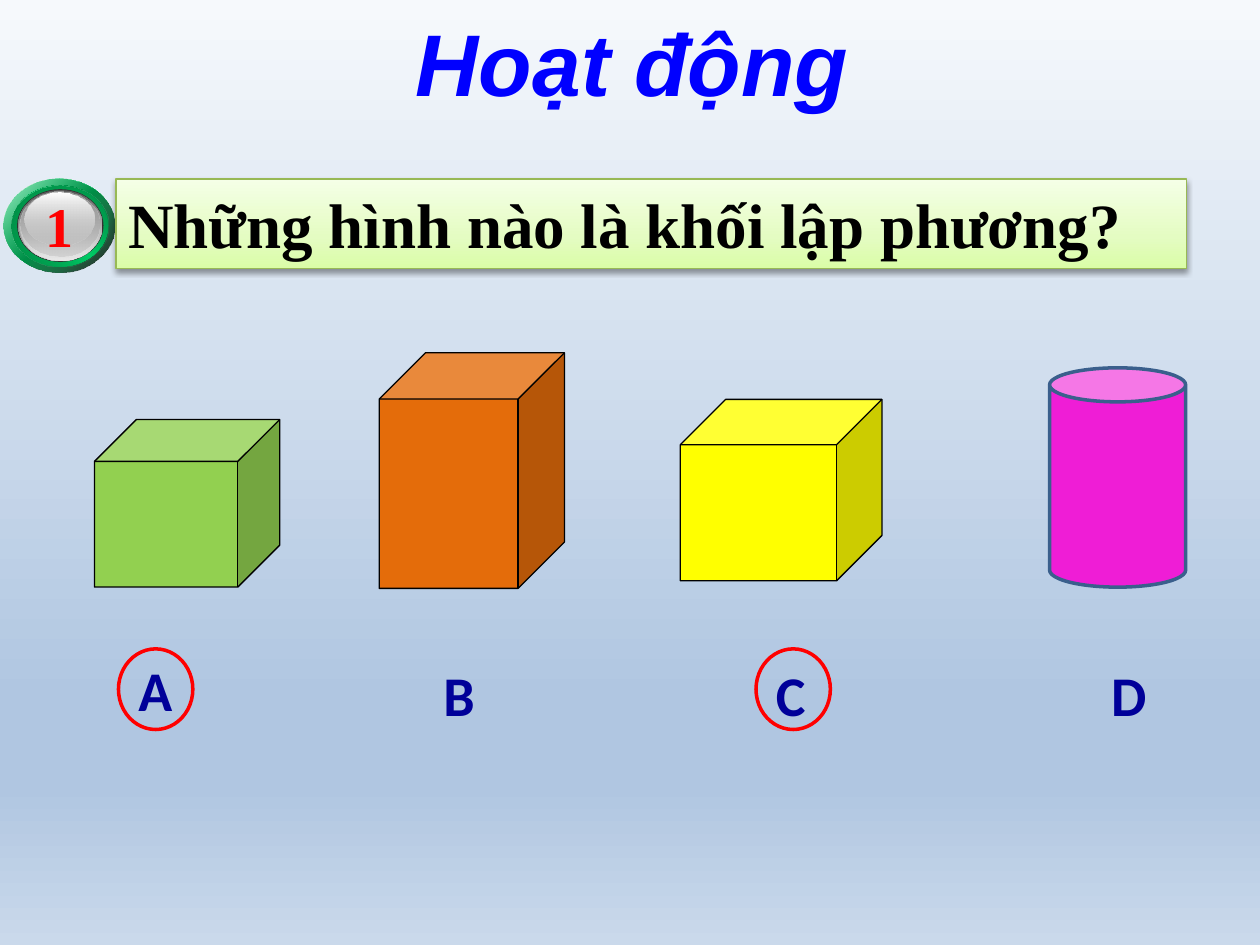
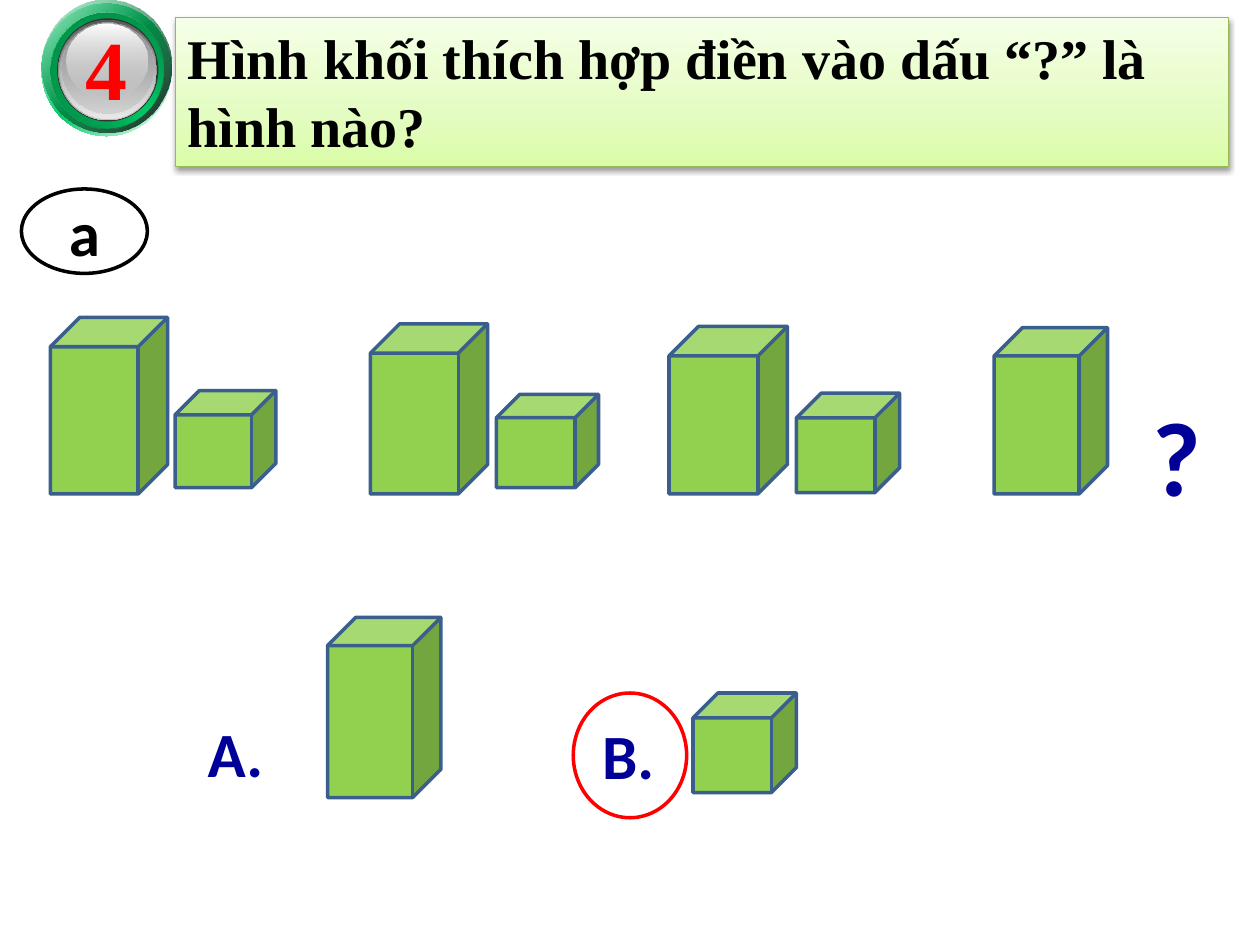
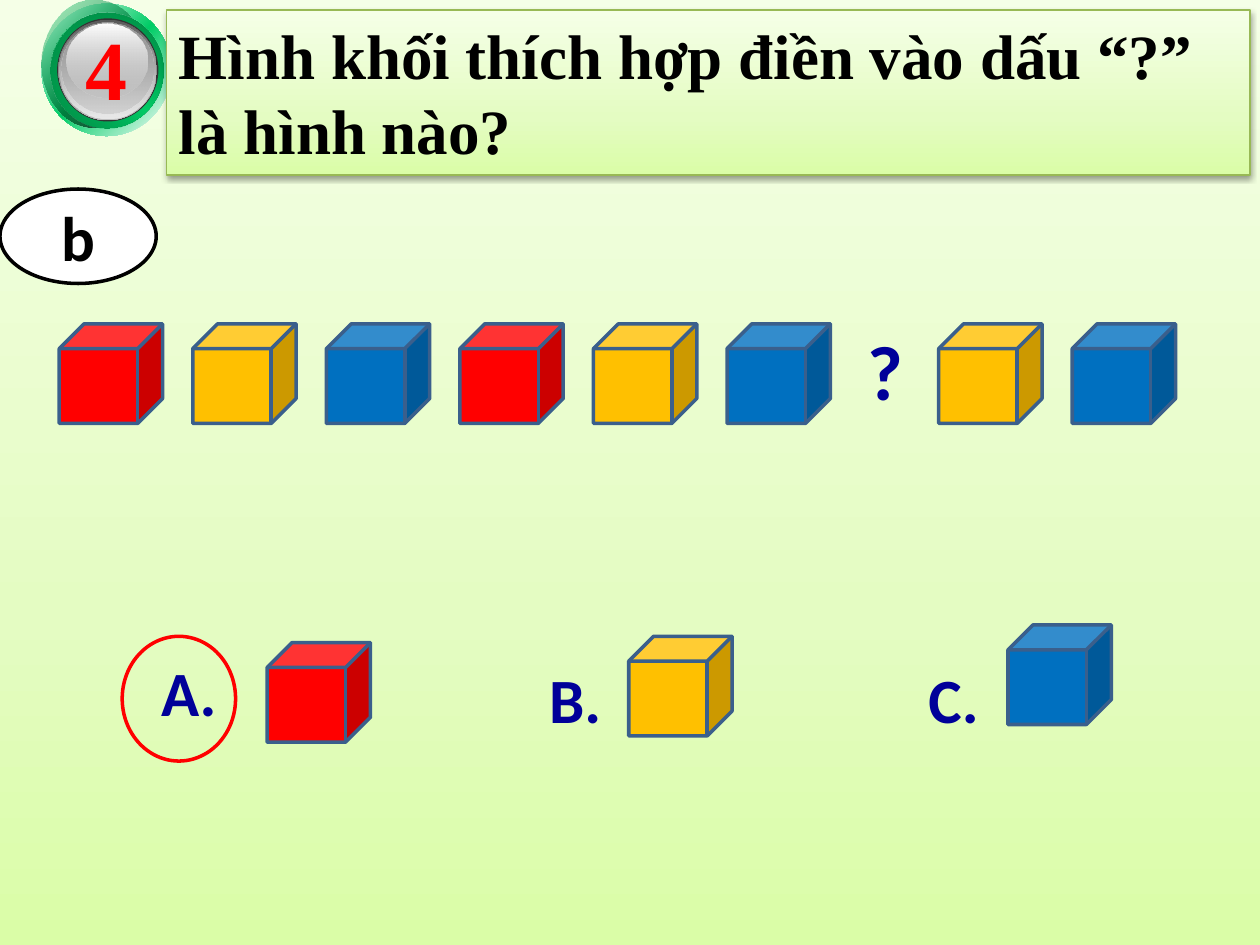
from lxml.etree import SubElement
from pptx import Presentation
from pptx.dml.color import RGBColor
from pptx.enum.shapes import MSO_SHAPE
from pptx.enum.text import MSO_ANCHOR, MSO_AUTO_SIZE, PP_ALIGN
from pptx.oxml.ns import qn
from pptx.util import Inches, Pt

COLORS = {
    "black": "000000", "white": "FFFFFF", "red": "FF0000", "navy": "000099",
    "title": "0000FF", "edge": "3A5F8C", "band_edge": "98B955", "rim": "333333",
    "green": "92D050", "orange": "E46C0A", "yellow": "FFFF00", "pink": "EF1DD6",
    "gold": "FFC000", "blue": "0070C0",
}

# A gradient is (angle, [(position, colour, opacity), ...])
LIME = (270, [(0, "DAFDA7", 100), (35, "E4FCC2", 100), (100, "F5FFE7", 100)])
SKY = (90, [(0, "F6F9FC", 100), (74, "B0C6E1", 100), (83, "B0C6E1", 100),
            (100, "CAD9EB", 100)])
HALO = (45, [(0, "FFFFFF", 100), (50, "00CC66", 100), (100, "FFFFFF", 100)])
SHEEN = (45, [(0, "00CC66", 32), (100, "000000", 90)])

# Inner badge layers: left, top, width, height as shares of the badge, then the fill
BADGE_LAYERS = [
    (0.07, 0.07, 0.87, 0.87,
     (315, [(0, "006E37", 100), (50, "00CC66", 100), (100, "006E37", 100)])),
    (0.07, 0.07, 0.87, 0.87, (45, [(0, "008241", 100), (100, "00CC66", 0)])),
    (0.12, 0.11, 0.78, 0.78, "rim"),
    (0.13, 0.12, 0.76, 0.76, (90, [(0, "595959", 100), (100, "C0C0C0", 100)])),
    (0.14, 0.13, 0.74, 0.74, (90, [(0, "C0C0C0", 0), (100, "E9E9E9", 100)])),
    (0.15, 0.14, 0.71, 0.69, (90, [(0, "989898", 100), (100, "C0C0C0", 48)])),
    (0.19, 0.15, 0.63, 0.56, (90, [(0, "FFFFFF", 100), (100, "C0C0C0", 38)])),
]


def rgb(name):
    return RGBColor.from_string(COLORS[name])


def add_color(parent, value, opacity):
    color = SubElement(parent, qn("a:srgbClr"), val=value)
    if opacity < 100:
        SubElement(color, qn("a:alpha"), val=str(opacity * 1000))


def paint(fill, properties, look):
    """Fill with a colour name, a gradient or nothing."""
    if look is None:
        fill.background()
        return
    fill.solid()
    if isinstance(look, str):
        fill.fore_color.rgb = rgb(look)
        return
    angle, stops = look
    solid = properties.find(qn("a:solidFill"))
    gradient = solid.makeelement(qn("a:gradFill"), {"rotWithShape": "1"})
    stop_list = SubElement(gradient, qn("a:gsLst"))
    for position, value, opacity in stops:
        stop = SubElement(stop_list, qn("a:gs"), pos=str(position * 1000))
        add_color(stop, value, opacity)
    SubElement(gradient, qn("a:lin"), ang=str(angle * 60000), scaled="0")
    properties.replace(solid, gradient)


def write(shape, text, size=36, color="navy", font="Calibri", italic=False,
          align=PP_ALIGN.LEFT, anchor=MSO_ANCHOR.TOP, wrap=True):
    frame = shape.text_frame
    frame.word_wrap = wrap
    frame.auto_size = MSO_AUTO_SIZE.NONE
    frame.vertical_anchor = anchor
    paragraph = frame.paragraphs[0]
    paragraph.alignment = align
    run = paragraph.add_run()
    run.text = text
    run.font.size = Pt(size)
    run.font.name = font
    run.font.bold = True
    run.font.italic = italic
    run.font.color.rgb = rgb(color)


class Lesson:
    def __init__(self):
        self.deck = Presentation()
        self.deck.slide_width = Inches(10)
        self.deck.slide_height = Inches(7.5)
        self.slide = None

    def new_slide(self, background):
        self.slide = self.deck.slides.add_slide(self.deck.slide_layouts[5])
        fill = self.slide.background.fill
        fill.solid()
        paint(fill, self.slide._element.find(".//" + qn("p:bgPr")), background)

    def shape(self, kind, box, look=None, line=None, width=2):
        shape = self.slide.shapes.add_shape(kind, *map(Inches, box))
        shape.shadow.inherit = False
        self.dress(shape, look, line, width)
        return shape

    def dress(self, shape, look, line, width):
        paint(shape.fill, shape._element.spPr, look)
        if line:
            shape.line.color.rgb = rgb(line)
            shape.line.width = Pt(width)
        else:
            shape.line.fill.background()

    def cube(self, box, color="green", line="edge", width=2):
        self.shape(MSO_SHAPE.CUBE, box, color, line, width)

    def answer_ring(self, *box):
        self.shape(MSO_SHAPE.OVAL, box, line="red")

    def label(self, text, box, **style):
        textbox = self.slide.shapes.add_textbox(*map(Inches, box))
        write(textbox, text, **style)

    def title(self, box):
        """Move the title placeholder to the front and into the box."""
        title = self.slide.shapes.title
        self.slide.shapes._spTree.append(title._element)
        title.left, title.top, title.width, title.height = map(Inches, box)
        return title

    def question(self, band, text, size):
        """Give a band its gradient, soft shadow and question."""
        self.dress(band, LIME, "band_edge", 0.75)
        band.shadow.inherit = False
        effects = band._element.spPr.find(qn("a:effectLst"))
        shadow = SubElement(effects, qn("a:outerShdw"), blurRad="40000",
                            dist="20000", dir="5400000", rotWithShape="0")
        add_color(shadow, COLORS["black"], 38)
        write(band, text, size=size, color="black", font="Times New Roman")

    def badge(self, number, box, sheen, size):
        left, top, width, height = box
        self.shape(MSO_SHAPE.OVAL, box, HALO)
        self.shape(MSO_SHAPE.OVAL, sheen, SHEEN)
        for x, y, w, h, look in BADGE_LAYERS:
            layer = (left + x * width, top + y * height, w * width, h * height)
            self.shape(MSO_SHAPE.OVAL, layer, look)
        self.label(number, (left, top + 0.05, width, height - 0.1), size=size,
                   color="red", font="Times New Roman", align=PP_ALIGN.CENTER)

    def letter_oval(self, letter, box):
        oval = self.shape(MSO_SHAPE.OVAL, box, "white", "black")
        write(oval, letter, color="black", align=PP_ALIGN.CENTER,
              anchor=MSO_ANCHOR.MIDDLE)

    def pattern_question(self, letter, letter_box, sheen, band_box, size):
        self.badge("4", (0.33, 0.03, 1.03, 1.05), sheen, 48)
        self.question(self.title(band_box),
                      "Hình khối thích hợp điền vào dấu “?” là hình nào?", size)
        self.letter_oval(letter, letter_box)


def cube_recognition(lesson):
    lesson.new_slide(SKY)
    badge = (0.03, 1.42, 0.88, 0.74)
    lesson.badge("1", badge, badge, 32)
    band = lesson.shape(MSO_SHAPE.RECTANGLE, (0.92, 1.42, 8.5, 0.71))
    lesson.question(band, "Những hình nào là khối lập phương?", 36)
    for box, color in [((0.75, 3.33, 1.47, 1.33), "green"),
                       ((3.01, 2.8, 1.47, 1.87), "orange"),
                       ((5.4, 3.17, 1.6, 1.44), "yellow")]:
        lesson.cube(box, color, "black", 0.75)
    lesson.shape(MSO_SHAPE.CAN, (8.33, 2.92, 1.08, 1.74), "pink", "edge")
    for letter, left, top in [("A", 1, 5.15), ("B", 3.42, 5.19),
                              ("C", 6.06, 5.19), ("D", 8.72, 5.19)]:
        lesson.label(letter, (left, top, 0.46, 0.64), size=32, wrap=False)
    for left in (0.94, 6):
        lesson.answer_ring(left, 5.15, 0.59, 0.64)
    write(lesson.title((3.2, 0.02, 3.83, 0.94)), "Hoạt động", size=50,
          color="title", font="Arial", italic=True)


def tall_and_short_pattern(lesson):
    lesson.new_slide("white")
    lesson.pattern_question("a", (0.17, 1.5, 1, 0.67), (0.33, 0, 1.03, 1.05),
                            (1.39, 0.14, 8.36, 1.18), 32)
    sequence = [
        (0.4, 2.52, 0.93, 1.4), (1.39, 3.1, 0.8, 0.77),
        (2.94, 2.57, 0.93, 1.35), (3.94, 3.13, 0.81, 0.74),
        (5.31, 2.59, 0.94, 1.33), (6.32, 3.12, 0.82, 0.79),
        (7.89, 2.6, 0.9, 1.32),
    ]
    choices = [(2.6, 4.9, 0.9, 1.43), (5.5, 5.5, 0.82, 0.79)]
    for box in sequence + choices:
        lesson.cube(box)
    lesson.label("?", (9.05, 3.06, 0.59, 1.11), size=60, wrap=False)
    lesson.label("A.", (1.55, 5.62, 0.65, 0.71), wrap=False)
    lesson.label("B.", (4.68, 5.64, 0.62, 0.71), wrap=False)
    lesson.answer_ring(4.55, 5.5, 0.9, 0.99)


def color_pattern(lesson):
    lesson.new_slide(LIME)
    lesson.pattern_question("b", (0, 1.5, 1.24, 0.75), (0.33, 0, 0.84, 1.01),
                            (1.32, 0.08, 8.6, 1.31), 36)
    cycle = ["red", "gold", "blue"]
    pitch = 1.06
    for start, colors in [(0.47, cycle * 2), (7.45, cycle[1:])]:
        for step, color in enumerate(colors):
            lesson.cube((start + step * pitch, 2.57, 0.82, 0.79), color)
    lesson.label("?", (6.79, 2.52, 0.49, 0.84), size=44, wrap=False)
    for letter, label_left, label_top, cube_left, cube_top, color in [
            ("A.", 1.18, 5.14, 2.12, 5.1, "red"),
            ("B.", 4.26, 5.19, 4.99, 5.05, "gold"),
            ("C.", 7.27, 5.19, 8, 4.96, "blue")]:
        lesson.label(letter, (label_left, label_top, 0.62, 0.71), wrap=False)
        lesson.cube((cube_left, cube_top, 0.82, 0.79), color)
    lesson.answer_ring(0.97, 5.05, 0.9, 0.99)


def main():
    lesson = Lesson()
    cube_recognition(lesson)
    tall_and_short_pattern(lesson)
    color_pattern(lesson)
    lesson.deck.save("out.pptx")


if __name__ == "__main__":
    main()
